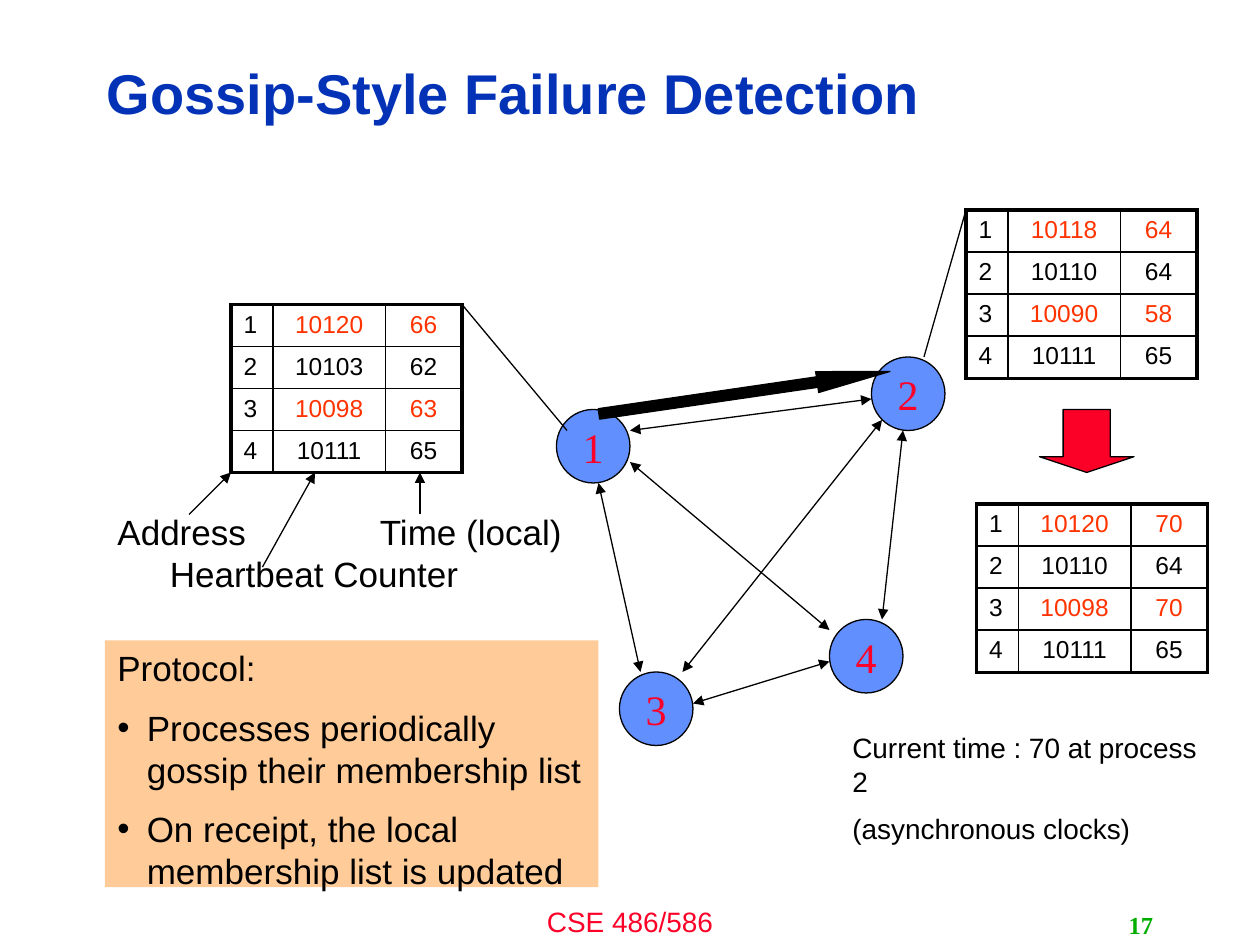
from lxml.etree import SubElement
from pptx import Presentation
from pptx.dml.color import RGBColor
from pptx.enum.shapes import MSO_CONNECTOR, MSO_SHAPE
from pptx.enum.text import MSO_ANCHOR, PP_ALIGN
from pptx.oxml.ns import qn
from pptx.util import Emu, Pt

EMU_PER_PX = 7620  # 120 px to the inch
BLACK, RED, ORANGE_RED = "000000", "FC0128", "FF3300"
NODE_SIZE = 70
COLUMN_WIDTHS = (40, 107, 73)
ROW_HEIGHT = 40


def px(length):
    return Emu(int(length * EMU_PER_PX))


def color(hex_string):
    return RGBColor.from_string(hex_string)


def add_run(paragraph, text, size, hex_color=BLACK, font="Arial", bold=False):
    run = paragraph.add_run()
    run.text = text
    run.font.size = Pt(size)
    run.font.name = font
    run.font.bold = bold
    run.font.color.rgb = color(hex_color)


def add_text_box(slide, box, text, size, hex_color=BLACK, font="Arial",
                 bold=False, align=PP_ALIGN.LEFT, anchor=MSO_ANCHOR.TOP,
                 line_spacing=None):
    frame = slide.shapes.add_textbox(*map(px, box)).text_frame
    frame.word_wrap = True
    frame.vertical_anchor = anchor
    paragraph = frame.paragraphs[0]
    paragraph.alignment = align
    paragraph.line_spacing = line_spacing or Pt(1.2 * size)
    add_run(paragraph, text, size, hex_color, font, bold)
    return frame


def add_paragraph(frame, text, size):
    paragraph = frame.add_paragraph()
    paragraph.alignment = PP_ALIGN.LEFT
    paragraph.line_spacing = Pt(1.2 * size)
    paragraph.space_before = Pt(size / 2)
    add_run(paragraph, text, size)
    return paragraph


def add_bullet(paragraph, indent):
    properties = paragraph._p.get_or_add_pPr()
    properties.set("marL", str(px(indent)))
    properties.set("indent", str(-px(indent)))
    SubElement(properties, qn("a:buFont"), typeface="Arial")
    SubElement(properties, qn("a:buChar"), char="•")


def add_shape(slide, kind, box, fill, outlined=True):
    shape = slide.shapes.add_shape(kind, *map(px, box))
    shape.shadow.inherit = False
    shape.fill.solid()
    shape.fill.fore_color.rgb = color(fill)
    if outlined:
        shape.line.color.rgb = color(BLACK)
        shape.line.width = Pt(0.75)
    else:
        shape.line.fill.background()
    return shape


def add_line(slide, start, end, heads=()):
    connector = slide.shapes.add_connector(
        MSO_CONNECTOR.STRAIGHT, *map(px, start + end))
    connector.line.color.rgb = color(BLACK)
    connector.line.width = Pt(0.75)
    line = connector.line._get_or_add_ln()
    for head in heads:
        SubElement(line, qn(f"a:{head}"), type="triangle")
    SubElement(connector._element.spPr, qn("a:effectLst"))


def set_cell_border(cell, side, width):
    line = SubElement(cell._tc.get_or_add_tcPr(), qn(f"a:{side}"),
                      w=str(Pt(width)))
    fill = SubElement(line, qn("a:solidFill"))
    SubElement(fill, qn("a:srgbClr"), val=BLACK)


def add_membership_table(slide, left, top, rows):
    """Address, heartbeat counter and local time of each process."""
    frame = slide.shapes.add_table(
        len(rows), len(COLUMN_WIDTHS), px(left), px(top),
        px(sum(COLUMN_WIDTHS)), px(ROW_HEIGHT * len(rows)))
    table = frame.table
    table.first_row = table.horz_banding = False
    for column, width in zip(table.columns, COLUMN_WIDTHS):
        column.width = px(width)
    last_row, last_column = len(rows) - 1, len(COLUMN_WIDTHS) - 1
    for i, values in enumerate(rows):
        table.rows[i].height = px(ROW_HEIGHT)
        for j, value in enumerate((i + 1,) + values):
            cell = table.cell(i, j)
            paragraph = cell.text_frame.paragraphs[0]
            paragraph.alignment = PP_ALIGN.CENTER if j else PP_ALIGN.LEFT
            highlighted = j > 0 and i in (0, 2)
            add_run(paragraph, str(value), 14,
                    ORANGE_RED if highlighted else BLACK)
            # Borders come before the fill in the cell properties
            outer = {"lnL": j == 0, "lnR": j == last_column,
                     "lnT": i == 0, "lnB": i == last_row}
            for side, is_outer in outer.items():
                set_cell_border(cell, side, 2.25 if is_outer else 1)
            cell.fill.background()


def add_process_graph(slide, left, top):
    """Four processes, the links between them and the gossip message."""
    nodes = {"1": (0, 50), "2": (300, 0), "4": (260, 250), "3": (60, 300)}
    for name, (x, y) in nodes.items():
        node = add_shape(slide, MSO_SHAPE.OVAL,
                         (left + x, top + y, NODE_SIZE, NODE_SIZE), "618FFD")
        frame = node.text_frame
        frame.word_wrap = False
        frame.vertical_anchor = MSO_ANCHOR.MIDDLE
        paragraph = frame.paragraphs[0]
        paragraph.alignment = PP_ALIGN.CENTER
        add_run(paragraph, name, 24, RED, "Times New Roman")

    links = [((70, 70), (300, 40)), ((40, 120), (80, 300)),
             ((130, 330), (260, 290)), ((310, 250), (330, 70)),
             ((120, 300), (310, 60)), ((260, 260), (70, 100))]
    for (x1, y1), (x2, y2) in links:
        add_line(slide, (left + x1, top + y1), (left + x2, top + y2),
                 ("headEnd", "tailEnd"))

    message = add_shape(slide, MSO_SHAPE.RIGHT_ARROW,
                        (left + 39, top + 24, 280, 20), BLACK)
    message.adjustments[0] = 0.5
    message.adjustments[1] = 3.5
    message.rotation = 351.7


def add_column_legend(slide, left, top):
    """Names of the table columns, each with a pointer."""
    labels = [("Address", (0, 30, 160, 52)),
              ("Heartbeat Counter", (50, 70, 310, 52)),
              ("Time (local)", (250, 30, 210, 52))]
    for text, (x, y, width, height) in labels:
        add_text_box(slide, (left + x, top + y, width, height), text, 20)
    pointers = [((80, 40), (120, 0)), ((150, 90), (200, 0)),
                ((300, 40), (300, 0))]
    for (x1, y1), (x2, y2) in pointers:
        add_line(slide, (left + x1, top + y1), (left + x2, top + y2),
                 ("tailEnd",))


def add_protocol(slide, box):
    panel = add_shape(slide, MSO_SHAPE.RECTANGLE, box, "FFCC99", outlined=False)
    frame = panel.text_frame
    frame.word_wrap = True
    frame.vertical_anchor = MSO_ANCHOR.TOP
    heading = frame.paragraphs[0]
    heading.alignment = PP_ALIGN.LEFT
    heading.line_spacing = Pt(24)
    add_run(heading, "Protocol:", 20)
    for text in ("Processes periodically gossip their membership list",
                 "On receipt, the local membership list is updated"):
        add_bullet(add_paragraph(frame, text, 20), 28)


def main():
    presentation = Presentation()
    presentation.slide_width, presentation.slide_height = px(1200), px(900)
    slide = presentation.slides.add_slide(presentation.slide_layouts[6])

    # Title and footer
    add_text_box(slide, (90, 43, 958, 97), "Gossip-Style Failure Detection", 32,
                 "0332B7", bold=True, anchor=MSO_ANCHOR.MIDDLE, line_spacing=0.9)
    add_text_box(slide, (400, 856, 400, 44), "CSE 486/586", 16, RED,
                 align=PP_ALIGN.CENTER)
    add_text_box(slide, (860, 862, 250, 38), "17", 14, "00AE00",
                 "Times New Roman", True, PP_ALIGN.RIGHT, MSO_ANCHOR.MIDDLE, 1.0)

    # Processes and their lists
    add_process_graph(slide, 530, 340)
    add_membership_table(slide, 220, 290, [
        (10120, 66), (10103, 62), (10098, 63), (10111, 65)])
    add_membership_table(slide, 920, 200, [
        (10118, 64), (10110, 64), (10090, 58), (10111, 65)])
    add_membership_table(slide, 930, 480, [
        (10120, 70), (10110, 64), (10098, 70), (10111, 65)])
    add_line(slide, (540, 410), (440, 290))
    add_line(slide, (880, 340), (920, 200))
    update_arrow = add_shape(slide, MSO_SHAPE.DOWN_ARROW, (990, 390, 90, 60), RED)
    update_arrow.adjustments[0] = 0.5
    update_arrow.adjustments[1] = 0.25

    # Explanations
    add_protocol(slide, (100, 610, 470, 235))
    add_column_legend(slide, 100, 450)
    clock_note = add_text_box(slide, (800, 690, 360, 115),
                              "Current time : 70 at process 2", 16)
    add_paragraph(clock_note, "(asynchronous clocks)", 16)

    presentation.save("out.pptx")


if __name__ == "__main__":
    main()
